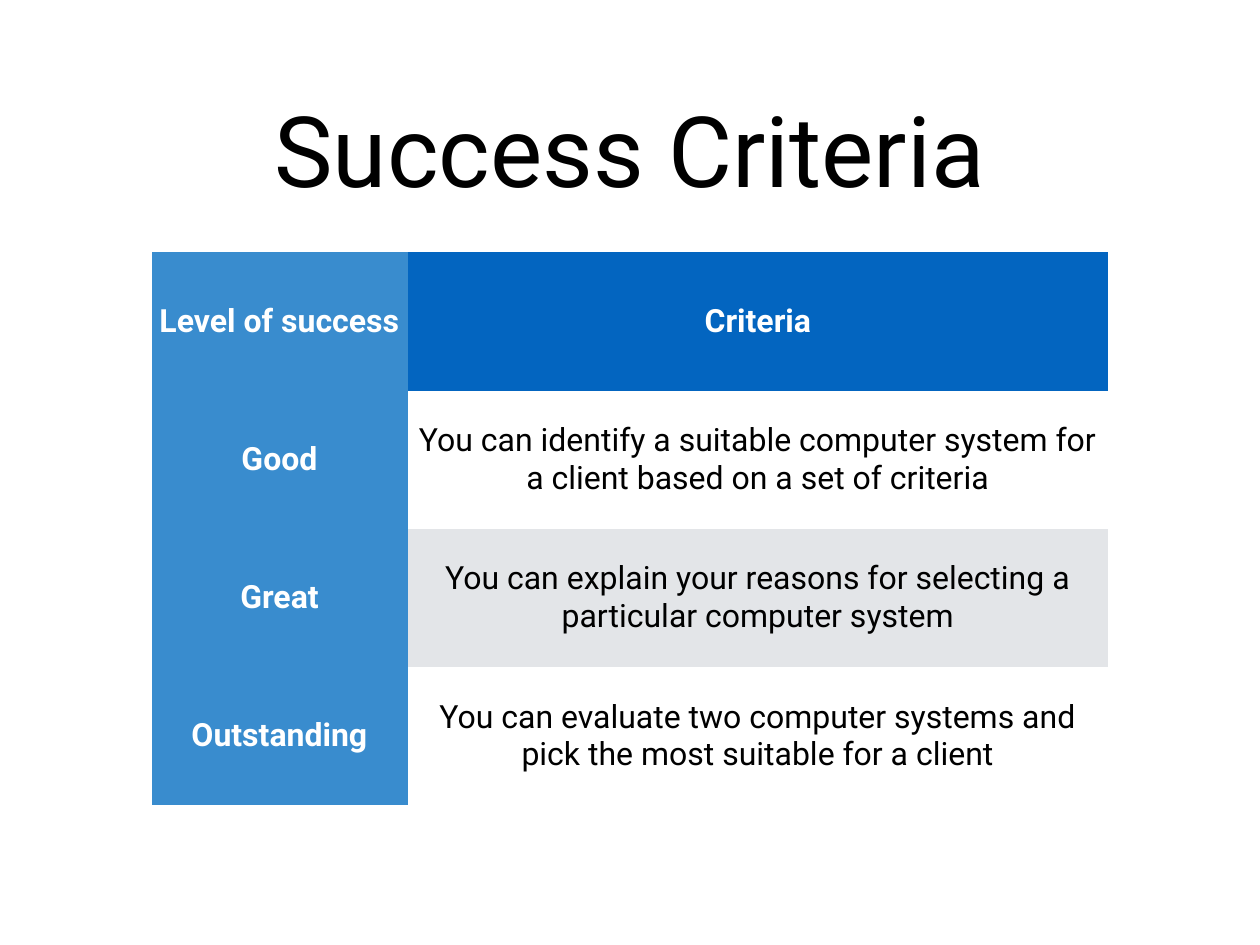
from pptx import Presentation
from pptx import util as u
from pptx.dml.color import RGBColor
from pptx.enum import text
from pptx.oxml import ns

BLACK = RGBColor(0x00, 0x00, 0x00)
WHITE = RGBColor(0xFF, 0xFF, 0xFF)
DARK_BLUE = RGBColor(0x03, 0x65, 0xC0)
LIGHT_BLUE = RGBColor(0x39, 0x8C, 0xCE)
GREY = RGBColor(0xE3, 0xE5, 0xE8)
NO_STYLE_NO_GRID = "{2D5ABB26-0587-4C30-8999-92F81FD0307C}"
MARGINS = dict.fromkeys(
    ("margin_left", "margin_right", "margin_top", "margin_bottom"), u.Inches(0.06))

LEVELS = [
    ("Level of success", "Criteria"),
    ("Good", "You can identify a suitable computer system for a client based on a set of criteria"),
    ("Great", "You can explain your reasons for selecting a particular computer system"),
    ("Outstanding", "You can evaluate two computer systems and pick the most suitable for a client"),
]


def set_values(target, values):
    for name, value in values.items():
        setattr(target, name, value)


def write(frame, words, size, color, bold):
    frame.word_wrap = True
    paragraph = frame.paragraphs[0]
    paragraph.alignment = text.PP_ALIGN.CENTER
    run = paragraph.add_run()
    run.text = words
    set_values(run.font, {"name": "Roboto", "size": u.Pt(size), "bold": bold})
    run.font.color.rgb = color


presentation = Presentation()
presentation.slide_width = width = u.Inches(14.22)
presentation.slide_height = height = u.Inches(10.67)
slide = presentation.slides.add_slide(presentation.slide_layouts[6])

title_left = int(width * 0.073)
title = slide.shapes.add_textbox(
    title_left, int(height * 0.046), width - 2 * title_left, int(height * 0.221))
set_values(title.text_frame, {**MARGINS, "vertical_anchor": text.MSO_ANCHOR.MIDDLE})
write(title.text_frame, "Success Criteria", 80, BLACK, False)

column_widths = [u.Inches(2.89), u.Inches(7.91)]
row_height = u.Inches(1.56)
table_width = sum(column_widths)
table = slide.shapes.add_table(
    len(LEVELS), len(column_widths), (width - table_width) // 2, u.Inches(2.85),
    table_width, row_height * len(LEVELS)).table
table._tbl.tblPr.find(ns.qn("a:tableStyleId")).text = NO_STYLE_NO_GRID
for column, column_width in zip(table.columns, column_widths):
    column.width = column_width

for row_index, level in enumerate(LEVELS):
    for column_index, words in enumerate(level):
        heading = row_index == 0 or column_index == 0
        if column_index == 0:
            fill = LIGHT_BLUE
        elif row_index == 0:
            fill = DARK_BLUE
        else:
            fill = WHITE if row_index % 2 else GREY
        cell = table.cell(row_index, column_index)
        set_values(cell, {**MARGINS, "vertical_anchor": text.MSO_ANCHOR.MIDDLE})
        cell.fill.solid()
        cell.fill.fore_color.rgb = fill
        write(cell.text_frame, words, 26, WHITE if heading else BLACK, heading)

presentation.save("out.pptx")
